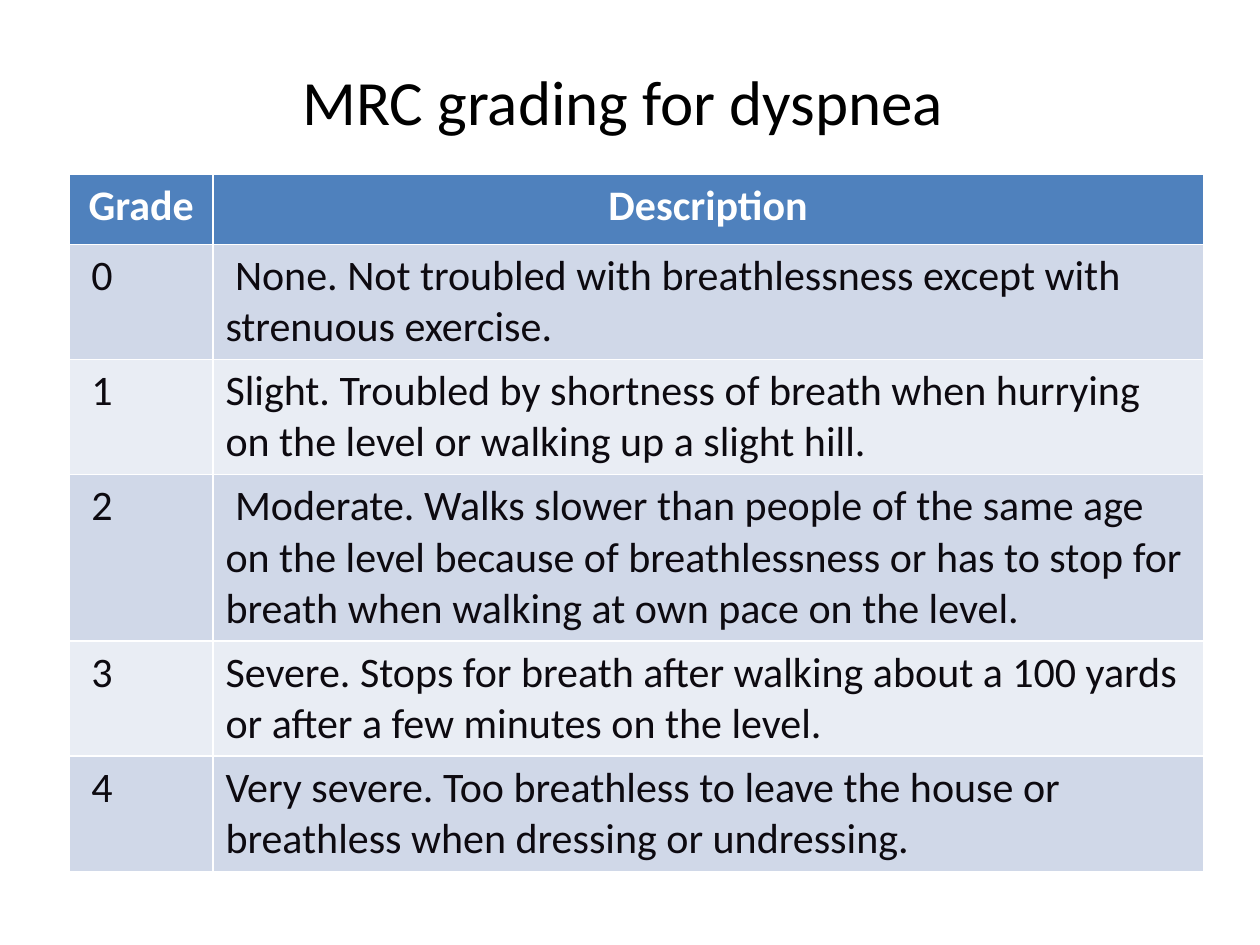
from pptx import Presentation
from pptx.dml.color import RGBColor
from pptx.enum.text import MSO_ANCHOR, PP_ALIGN
from pptx.util import Inches, Pt

CENTER, LEFT = PP_ALIGN.CENTER, PP_ALIGN.LEFT
MIDDLE = MSO_ANCHOR.MIDDLE

TITLE = "MRC grading for dyspnea "
HEADER = ("Grade", "Description")
GRADES = [
    (" 0", " None. Not troubled with breathlessness except with strenuous exercise."),
    (" 1", "Slight. Troubled by shortness of breath when hurrying on the level or "
           "walking up a slight hill."),
    (" 2", " Moderate. Walks slower than people of the same age on the level because of "
           "breathlessness or has to stop for breath when walking at own pace on the level."),
    (" 3", "Severe. Stops for breath after walking about a 100 yards or after a few "
           "minutes on the level."),
    (" 4", "Very severe. Too breathless to leave the house or breathless when dressing "
           "or undressing."),
]
COLUMN_WIDTHS = (1.14, 7.86)
ROW_HEIGHTS = (0.56, 0.86, 0.86, 1.25, 0.86, 0.91)

THEME = {
    "font": "Calibri",
    "title_size": 36,
    "table_size": 24,
    "title": "000000",
    "header_text": "FFFFFF",
    "body_text": "0D0A10",
    "header_fill": "4F81BD",
    "band_fills": ("D0D8E8", "E9EDF4"),
}


def format_paragraph(paragraph, size, color, alignment, bold=False):
    paragraph.alignment = alignment
    font = paragraph.font
    font.name = THEME["font"]
    font.size = Pt(size)
    font.bold = bold
    font.color.rgb = RGBColor.from_string(color)


def add_title(slide):
    title = slide.shapes.title
    title.left, title.top = Inches(0.51), Inches(0.44)
    title.width, title.height = Inches(8.98), Inches(0.71)
    title.text_frame.text = TITLE
    title.text_frame.vertical_anchor = MIDDLE
    format_paragraph(title.text_frame.paragraphs[0], THEME["title_size"],
                     THEME["title"], CENTER)


def add_grading_table(slide):
    rows = [HEADER] + GRADES
    table = slide.shapes.add_table(
        len(rows), len(HEADER), Inches(0.55), Inches(1.38),
        Inches(sum(COLUMN_WIDTHS)), Inches(sum(ROW_HEIGHTS))).table
    for column, width in zip(table.columns, COLUMN_WIDTHS):
        column.width = Inches(width)
    for row, height in zip(table.rows, ROW_HEIGHTS):
        row.height = Inches(height)

    for row_index, texts in enumerate(rows):
        is_header = row_index == 0
        if is_header:
            fill, color, alignment = THEME["header_fill"], THEME["header_text"], CENTER
        else:
            fill = THEME["band_fills"][(row_index - 1) % 2]
            color, alignment = THEME["body_text"], LEFT
        for column_index, text in enumerate(texts):
            cell = table.cell(row_index, column_index)
            cell.fill.solid()
            cell.fill.fore_color.rgb = RGBColor.from_string(fill)
            cell.text = text
            format_paragraph(cell.text_frame.paragraphs[0], THEME["table_size"],
                             color, alignment, is_header)


def main():
    presentation = Presentation()
    presentation.slide_width, presentation.slide_height = Inches(10), Inches(7.5)
    slide = presentation.slides.add_slide(presentation.slide_layouts[5])
    add_grading_table(slide)
    add_title(slide)
    presentation.save("out.pptx")


if __name__ == "__main__":
    main()
